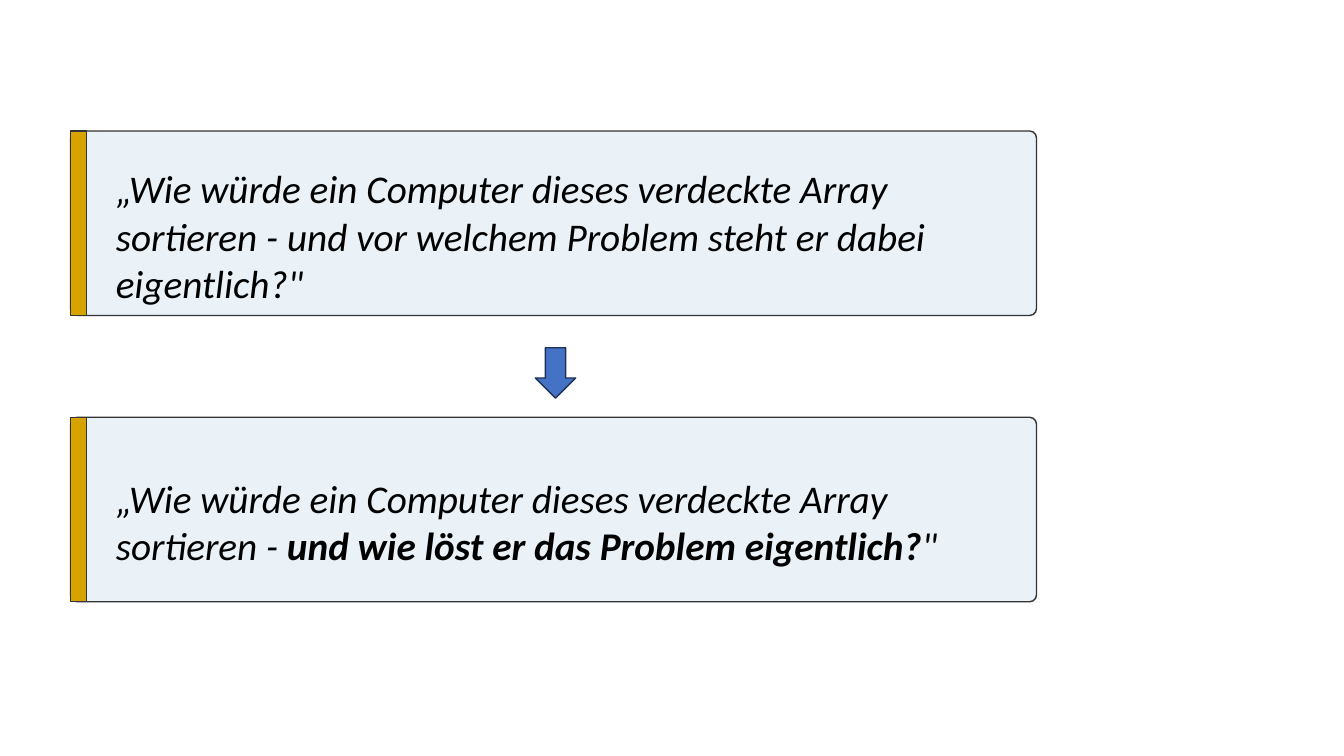
from pptx import Presentation
from pptx.dml.color import RGBColor
from pptx.enum.shapes import MSO_SHAPE as Shape
from pptx.enum.text import MSO_ANCHOR as Anchor
from pptx.util import Inches, Pt


def color(value):
    return RGBColor.from_string(value)


def add_block(kind, left, top, width, height, fill, line):
    block = page.shapes.add_shape(kind, Inches(left), Inches(top), Inches(width), Inches(height))
    block.shadow.inherit = False
    block.fill.solid()
    block.fill.fore_color.rgb = color(fill)
    block.line.color.rgb = color(line)
    block.line.width = Pt(1)
    return block


deck = Presentation()
deck.slide_width = Inches(13.33)
deck.slide_height = Inches(7.5)
page = deck.slides.add_slide(deck.slide_layouts[6])

card_left, card_width, card_height = 0.7, 9.58, 1.83
first_top, row_step = 1.3, 2.84
opening = "„Wie würde ein Computer dieses verdeckte Array sortieren - "
questions = [
    [(opening + 'und vor welchem Problem steht er dabei eigentlich?"', False)],
    [(opening, False), ("und wie löst er das Problem eigentlich?", True), ('"', False)],
]

for row, question in enumerate(questions):
    top = first_top + row * row_step
    card = add_block(Shape.ROUNDED_RECTANGLE, card_left, top, card_width, card_height, "EAF2F8", "333333")
    card.adjustments[0] = 0.037
    add_block(Shape.RECTANGLE, card_left, top, 0.16, card_height, "D6A300", "333333")

    box = page.shapes.add_textbox(Inches(card_left + 0.35), Inches(top + 0.2), Inches(8.91), Inches(1.67))
    frame = box.text_frame
    frame.word_wrap = True
    frame.vertical_anchor = Anchor.MIDDLE
    para = frame.paragraphs[0]
    para.font.name = "Calibri"
    para.font.size = Pt(28)
    para.font.italic = True
    para.font.color.rgb = color("000000")
    for text, bold in question:
        span = para.add_run()
        span.text = text
        span.font.bold = bold

add_block(Shape.DOWN_ARROW, 5.31, 3.45, 0.4, 0.5, "4472C4", "1E3256")

deck.save("out.pptx")
